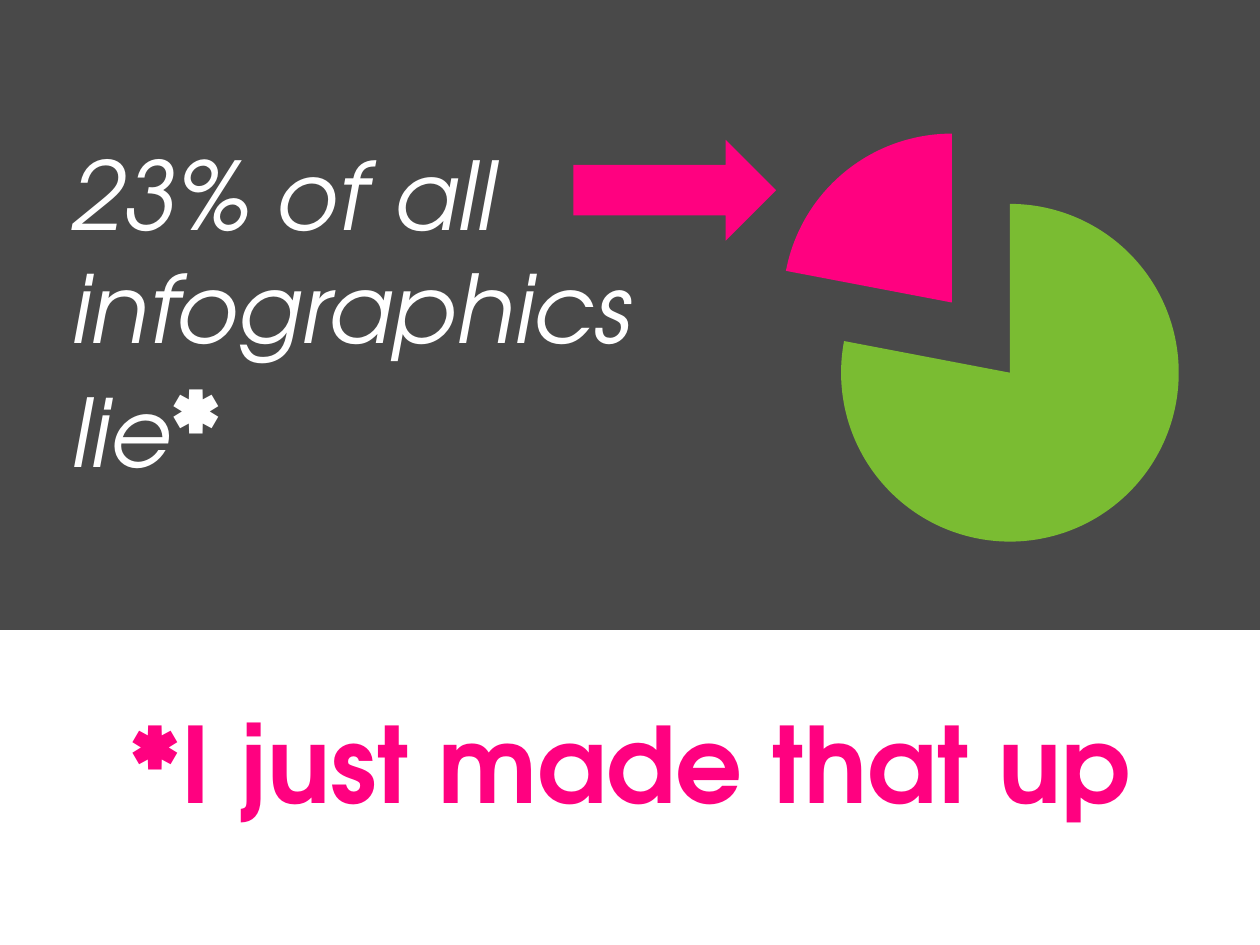
from lxml import etree
from pptx import Presentation
from pptx.chart.data import CategoryChartData
from pptx.dml.color import RGBColor
from pptx.enum.chart import XL_CHART_TYPE as Chart
from pptx.enum.shapes import MSO_SHAPE as Shape
from pptx.enum.text import MSO_ANCHOR as Anchor, PP_ALIGN as Align
from pptx.oxml.ns import qn
from pptx.util import Inches, Pt

FONT = "TeX Gyre Adventor"
PINK, GREEN, GREY, WHITE = "FF0180", "7ABC32", "494949", "FFFFFF"


def color(value):
    return RGBColor.from_string(value)


def inches(area):
    return [Inches(length) for length in area]


class Builder:
    def __init__(self, page):
        self.page = page

    def style(self, font, size, value, bold=False, italic=False):
        font.name = FONT
        font.size = Pt(size)
        font.color.rgb = color(value)
        font.bold = bold
        font.italic = italic

    def shape(self, kind, area, fill):
        shape = self.page.shapes.add_shape(kind, *inches(area))
        shape.shadow.inherit = False
        shape.fill.solid()
        shape.fill.fore_color.rgb = color(fill)
        shape.line.fill.background()

    def text(self, area, spans, value, align=Align.LEFT, anchor=Anchor.TOP):
        frame = self.page.shapes.add_textbox(*inches(area)).text_frame
        frame.word_wrap = True
        frame.vertical_anchor = anchor
        para = frame.paragraphs[0]
        para.alignment = align
        for words, size, bold, italic in spans:
            span = para.add_run()
            span.text = words
            self.style(span.font, size, value, bold, italic)

    def pie(self, area, values, fills, explosion):
        data = CategoryChartData()
        data.categories = [str(number + 1) for number in range(len(values))]
        data.add_series("Series 1", values)
        chart = self.page.shapes.add_chart(Chart.PIE, *inches(area), data).chart
        chart.has_title = False
        chart.has_legend = False
        self.style(chart.font, 18, GREY)
        plot = chart.plots[0]
        plot.vary_by_categories = True
        series = plot.series[0]
        for index, fill in enumerate(fills):
            part = series.points[index].format
            part.fill.solid()
            part.fill.fore_color.rgb = color(fill)
            part.line.fill.background()
        offset = etree.Element(qn("c:explosion"), val=str(explosion))
        series._element.find(qn("c:dPt")).addprevious(offset)


def main():
    deck = Presentation()
    deck.slide_width, deck.slide_height = Inches(10), Inches(7.5)
    page = deck.slides.add_slide(deck.slide_layouts[6])
    page.background.fill.solid()
    page.background.fill.fore_color.rgb = color(WHITE)
    builder = Builder(page)
    builder.text((0.5, 5.42, 9, 1.25), [("*I just made that up", 60, True, False)],
                 PINK, Align.CENTER, Anchor.MIDDLE)
    builder.shape(Shape.RECTANGLE, (0, 0, 10, 5), GREY)
    builder.pie((5.92, 0.84, 3.73, 3.68), (78, 22), (GREEN, PINK), 27)
    builder.text((0.47, 1.03, 4.97, 2.93),
                 [("23% of all infographics lie", 54, False, True),
                  ("*", 60, True, False)], WHITE)
    builder.shape(Shape.RIGHT_ARROW, (4.55, 1.11, 1.61, 0.8), PINK)
    deck.save("out.pptx")


if __name__ == "__main__":
    main()
